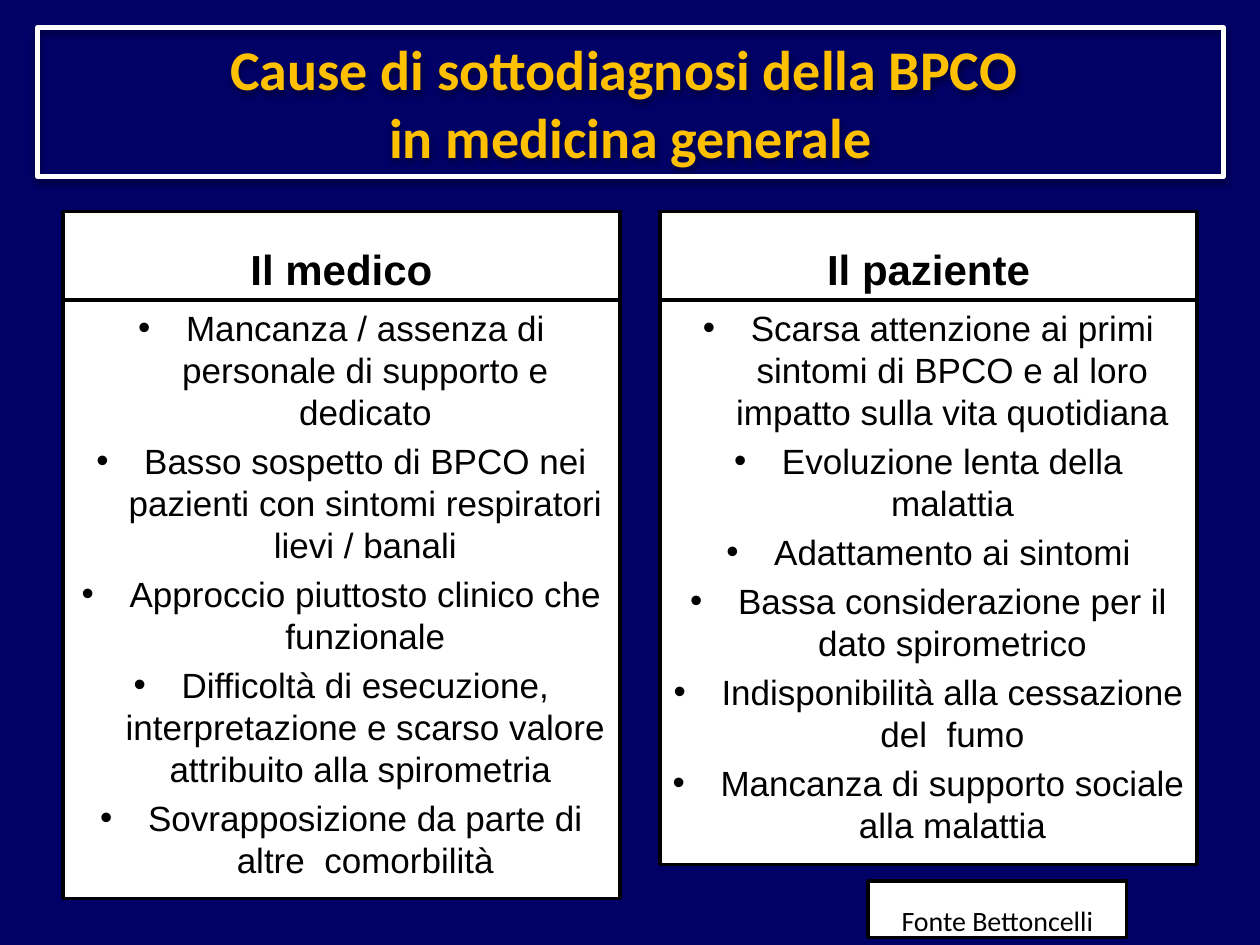
from lxml.etree import SubElement
from pptx import Presentation
from pptx.dml.color import RGBColor
from pptx.enum.shapes import MSO_SHAPE
from pptx.enum.text import MSO_ANCHOR, PP_ALIGN
from pptx.oxml.ns import qn
from pptx.util import Inches, Pt

COLORS = {"back": "000066", "white": "FFFFFF", "black": "000000", "gold": "FFC000"}

TITLE = {"name": "Calibri", "size": Pt(32), "bold": True}
HEAD = {"name": "Arial", "size": Pt(24), "bold": True}
BODY = {"name": "Arial", "size": Pt(20), "bold": False}
NOTE = {"name": "Calibri", "size": Pt(16), "bold": False}

TOP, SPLIT = 1.68, 2.38
INDENT = Inches(0.38)

# Left, width, body height, heading, causes
COLUMNS = [
    (0.5, 4.42, 4.75, "Il medico", [
        "Mancanza / assenza di personale di supporto e dedicato",
        "Basso sospetto di BPCO nei pazienti con sintomi respiratori lievi / banali",
        "Approccio piuttosto clinico che funzionale",
        "Difficoltà di esecuzione, interpretazione e scarso valore attribuito alla spirometria ",
        "Sovrapposizione da parte di altre  comorbilità",
    ]),
    (5.24, 4.26, 4.48, "Il paziente", [
        "Scarsa attenzione ai primi sintomi di BPCO e al loro impatto sulla vita quotidiana",
        "Evoluzione lenta della malattia",
        "Adattamento ai sintomi",
        "Bassa considerazione per il dato spirometrico",
        "Indisponibilità alla cessazione del  fumo",
        "Mancanza di supporto sociale alla malattia",
    ]),
]


def color(name):
    return RGBColor.from_string(COLORS[name])


def add_box(slide, area, fill="white", line="black", width=2, anchor=MSO_ANCHOR.TOP):
    box = slide.shapes.add_shape(MSO_SHAPE.RECTANGLE, *map(Inches, area))
    box.shadow.inherit = False
    if fill:
        box.fill.solid()
        box.fill.fore_color.rgb = color(fill)
    else:
        box.fill.background()
    box.line.color.rgb = color(line)
    box.line.width = Pt(width)
    box.text_frame.word_wrap = True
    box.text_frame.vertical_anchor = anchor
    return box


def add_text(box, lines, style, ink="black", **spacing):
    frame = box.text_frame
    for i, line in enumerate(lines):
        para = frame.add_paragraph() if i else frame.paragraphs[0]
        para.text = line
        para.alignment = PP_ALIGN.CENTER
        for key, value in spacing.items():
            setattr(para, key, value)
        for run in para.runs:
            for key, value in style.items():
                setattr(run.font, key, value)
            run.font.color.rgb = color(ink)


def add_bullets(box):
    for para in box.text_frame.paragraphs:
        props = para._p.get_or_add_pPr()
        props.set("marL", str(INDENT))
        props.set("indent", str(-INDENT))
        SubElement(props, qn("a:buFont"), typeface="Arial")
        SubElement(props, qn("a:buChar"), char="•")


def add_shadow(box):
    effects = box._element.spPr.find(qn("a:effectLst"))
    shade = SubElement(effects, qn("a:outerShdw"), blurRad=str(Pt(3.1)),
                       dist=str(Pt(1.6)), dir="5400000", rotWithShape="0")
    ink = SubElement(shade, qn("a:srgbClr"), val=COLORS["black"])
    SubElement(ink, qn("a:alpha"), val="38000")


def add_column(slide, left, width, height, heading, causes):
    head = add_box(slide, (left, TOP, width, SPLIT - TOP), anchor=MSO_ANCHOR.BOTTOM)
    add_text(head, [heading], HEAD, space_before=Pt(5))
    body = add_box(slide, (left, SPLIT, width, height))
    add_text(body, causes, BODY, space_before=Pt(4))
    add_bullets(body)


def main():
    deck = Presentation()
    deck.slide_width, deck.slide_height = Inches(10), Inches(7.5)
    slide = deck.slides.add_slide(deck.slide_layouts[6])
    slide.background.fill.solid()
    slide.background.fill.fore_color.rgb = color("back")

    # Title
    title = add_box(slide, (0.3, 0.22, 9.41, 1.18), None, "white", 3, MSO_ANCHOR.MIDDLE)
    add_text(title, ["Cause di sottodiagnosi della BPCO \vin medicina generale"], TITLE, "gold")
    add_shadow(title)

    # Causes on each side
    for column in COLUMNS:
        add_column(slide, *column)

    # Source
    note = add_box(slide, (6.89, 6.99, 2.05, 0.45))
    add_text(note, ["Fonte Bettoncelli"], NOTE, line_spacing=1.5)

    deck.save("out.pptx")


if __name__ == "__main__":
    main()
